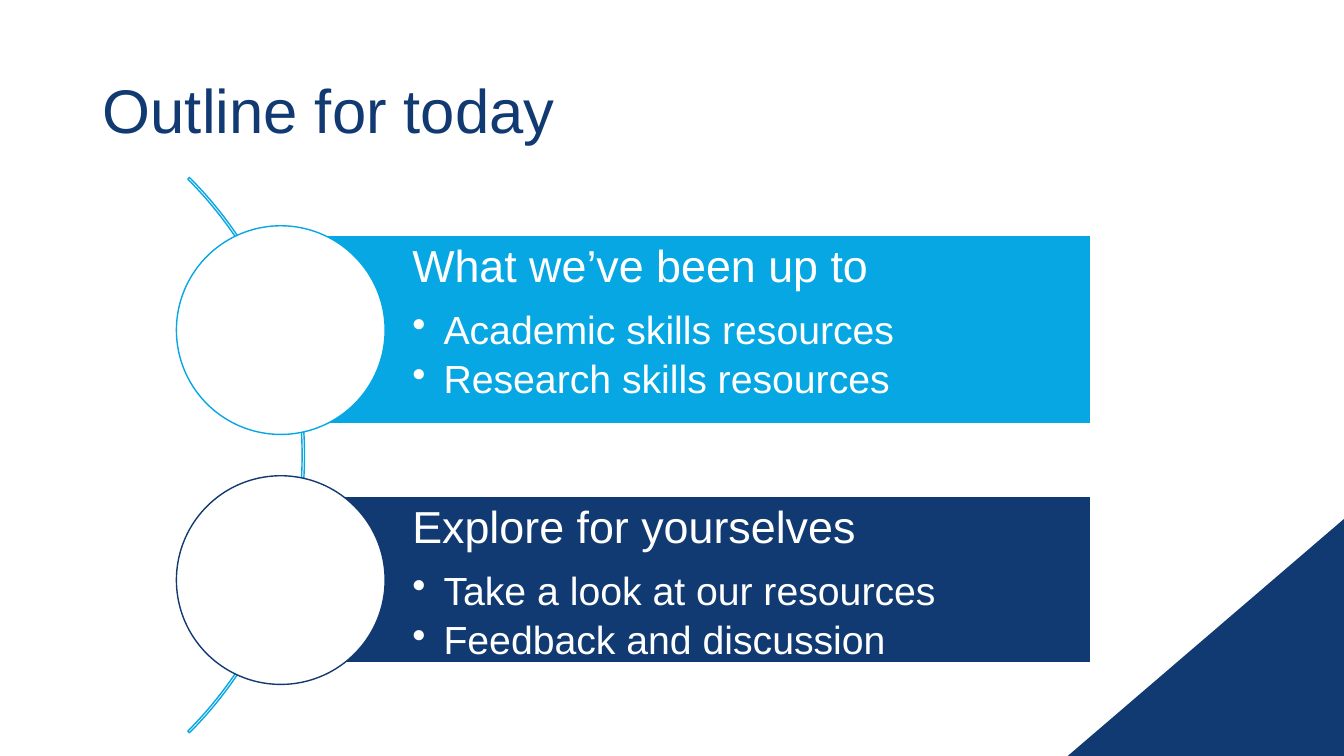
from lxml.etree import SubElement
from pptx import Presentation
from pptx.dml.color import RGBColor
from pptx.enum.shapes import MSO_SHAPE
from pptx.enum.text import MSO_ANCHOR, MSO_AUTO_SIZE, PP_ALIGN
from pptx.oxml.ns import qn
from pptx.util import Inches, Pt

HUES = {"navy": "113A72", "sky": "07A7E3", "white": "FFFFFF"}
TOPICS = [
    ("sky", 2.33, 1.87, "What we’ve been up to",
     ["Academic skills resources", "Research skills resources"]),
    ("navy", 4.92, 1.65, "Explore for yourselves",
     ["Take a look at our resources", "Feedback and discussion"]),
]


class Deck:
    """Hold the style and the current slide, and draw its elements."""

    font = "Arial"

    def __init__(self):
        self.file = Presentation()
        self.file.slide_width = Inches(13.33)
        self.file.slide_height = Inches(7.5)
        self.slide = self.file.slides.add_slide(self.file.slide_layouts[5])

    def hue(self, name):
        return RGBColor.from_string(HUES[name])

    def shape(self, kind, box, fill=None, line=None):
        item = self.slide.shapes.add_shape(kind, *map(Inches, box))
        item.shadow.inherit = False
        if fill:
            item.fill.solid()
            item.fill.fore_color.rgb = self.hue(fill)
        else:
            item.fill.background()
        if line:
            item.line.color.rgb = self.hue(line)
            item.line.width = Pt(1)
        else:
            item.line.fill.background()
        return item

    def style(self, para, size, hue, after=0):
        para.alignment = PP_ALIGN.LEFT
        para.line_spacing = 0.9
        para.space_before = Pt(0)
        para.space_after = Pt(after)
        para.font.name = self.font
        para.font.size = Pt(size)
        para.font.color.rgb = self.hue(hue)

    def title(self, text, box):
        item = self.slide.shapes.title
        item.left, item.top, item.width, item.height = map(Inches, box)
        frame = item.text_frame
        frame.text = text
        frame.auto_size = MSO_AUTO_SIZE.NONE
        frame.vertical_anchor = MSO_ANCHOR.MIDDLE
        self.style(frame.paragraphs[0], 44, "navy")

    def corner(self, box):
        item = self.shape(MSO_SHAPE.RIGHT_TRIANGLE, box, "navy")
        item._element.spPr.xfrm.set("flipH", "1")

    def arc(self, box):
        item = self.shape(MSO_SHAPE.BLOCK_ARC, box, line="sky")
        for i, value in enumerate((189, 27, 0.003)):
            item.adjustments[i] = value

    def bullet(self, para, text):
        para.text = text
        para.level = 1
        props = para._p.get_or_add_pPr()
        props.set("marL", str(Inches(0.31)))
        props.set("indent", str(Inches(-0.31)))
        SubElement(props, qn("a:buChar"), char="•")
        self.style(para, 28, "white", 5)

    def panel(self, hue, box, head, points):
        item = self.shape(MSO_SHAPE.RECTANGLE, box, hue, "white")
        frame = item.text_frame
        frame.word_wrap = True
        frame.vertical_anchor = MSO_ANCHOR.TOP
        frame.margin_left = Inches(1.31)
        frame.margin_top = frame.margin_right = frame.margin_bottom = Inches(0.09)
        frame.text = head
        self.style(frame.paragraphs[0], 32, "white", 13)
        for point in points:
            self.bullet(frame.add_paragraph(), point)

    def disc(self, hue, box):
        self.shape(MSO_SHAPE.OVAL, box, "white", hue)


def main():
    deck = Deck()
    deck.corner((10.59, 5.14, 2.75, 2.36))
    deck.title("Outline for today", (0.92, 0.4, 11.5, 1.45))
    deck.arc((-4.77, 0.62, 7.79, 7.79))
    for i, (hue, top, height, head, points) in enumerate(TOPICS):
        deck.panel(hue, (2.78, top, 8.04, height), head, points)
        deck.disc(hue, (1.75, 2.24 + 2.48 * i, 2.07, 2.07))
    deck.file.save("out.pptx")


if __name__ == "__main__":
    main()
